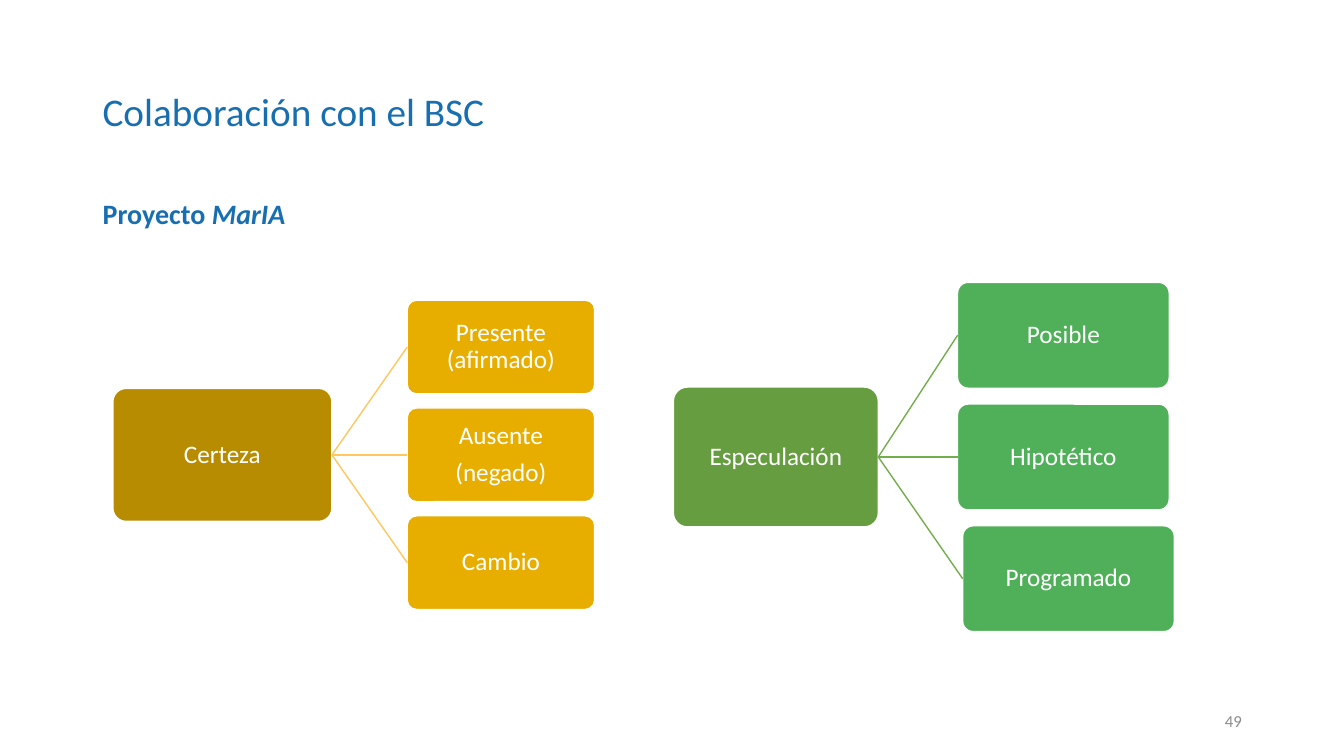
from dataclasses import dataclass

from lxml.etree import SubElement
from pptx import Presentation
from pptx.dml.color import RGBColor
from pptx.enum.shapes import MSO_CONNECTOR, MSO_SHAPE
from pptx.enum.text import MSO_ANCHOR, PP_ALIGN
from pptx.oxml.ns import qn
from pptx.shapes.autoshape import Shape
from pptx.slide import Slide
from pptx.util import Inches, Length, Pt

WIDTH = Inches(13.333)
HEIGHT = Inches(7.5)


@dataclass(frozen=True)
class Theme:
    font: str = "Calibri"
    heading: str = "176FB1"
    number: str = "8C8C8C"
    white: str = "FFFFFF"
    title_size: int = 28
    subtitle_size: int = 20
    node_size: int = 18
    number_size: int = 12
    gold_root: str = "B88C00"
    gold_leaf: str = "E7AE00"
    gold_line: str = "FFC75E"
    green_root: str = "669D40"
    green_leaf: str = "50B059"
    green_line: str = "73AE4C"


THEME = Theme()


@dataclass(frozen=True)
class Area:
    """A rectangle in percent of the slide's width and height."""
    left: float
    top: float
    width: float
    height: float

    def lengths(self) -> tuple[Length, Length, Length, Length]:
        return (across(self.left), down(self.top),
                across(self.width), down(self.height))


@dataclass(frozen=True)
class Style:
    size: int
    color: str
    align: PP_ALIGN = PP_ALIGN.LEFT
    line_spacing: float = 1.0
    space_after: float = 0


@dataclass(frozen=True)
class Run:
    text: str
    bold: bool = False
    italic: bool = False


@dataclass(frozen=True)
class Leaf:
    lines: tuple[str, ...]
    shift: float = 0


@dataclass(frozen=True)
class Tree:
    root: str
    root_area: Area
    leaf_left: float
    leaf_width: float
    leaf_height: float
    leaves: tuple[Leaf, ...]
    root_color: str
    leaf_color: str
    line_color: str


NODE_STYLE = Style(THEME.node_size, THEME.white, PP_ALIGN.CENTER, 0.9, 6.3)
LEAF_PITCH = 1.15  # in leaf heights

TREES = (
    Tree("Certeza", Area(8.4, 51.37, 16.3, 17.6), 30.3, 13.95, 12.4,
         (Leaf(("Presente (afirmado)",)), Leaf(("Ausente", "(negado)")),
          Leaf(("Cambio",))),
         THEME.gold_root, THEME.gold_leaf, THEME.gold_line),
    Tree("Especulación", Area(50.1, 51.2, 15.25, 18.5), 71.25, 15.75, 14,
         (Leaf(("Posible",)), Leaf(("Hipotético",)),
          Leaf(("Programado",), 0.38)),
         THEME.green_root, THEME.green_leaf, THEME.green_line),
)


def across(percent: float) -> Length:
    return Length(round(WIDTH * percent / 100))


def down(percent: float) -> Length:
    return Length(round(HEIGHT * percent / 100))


def write(shape: Shape, paragraphs: list[list[Run]], style: Style,
          anchor: MSO_ANCHOR) -> None:
    frame = shape.text_frame
    frame.word_wrap = True
    frame.vertical_anchor = anchor
    for index, runs in enumerate(paragraphs):
        paragraph = frame.add_paragraph() if index else frame.paragraphs[0]
        paragraph.alignment = style.align
        paragraph.line_spacing = style.line_spacing
        paragraph.space_after = Pt(style.space_after)
        for part in runs:
            run = paragraph.add_run()
            run.text = part.text
            run.font.name = THEME.font
            run.font.size = Pt(style.size)
            run.font.bold = part.bold
            run.font.italic = part.italic
            run.font.color.rgb = RGBColor.from_string(style.color)


def add_text(slide: Slide, area: Area, runs: list[Run], style: Style,
             anchor: MSO_ANCHOR = MSO_ANCHOR.MIDDLE) -> None:
    write(slide.shapes.add_textbox(*area.lengths()), [runs], style, anchor)


def add_node(slide: Slide, area: Area, lines: tuple[str, ...],
             color: str) -> Shape:
    shape = slide.shapes.add_shape(MSO_SHAPE.ROUNDED_RECTANGLE, *area.lengths())
    shape.adjustments[0] = 0.1
    shape.shadow.inherit = False
    shape.fill.solid()
    shape.fill.fore_color.rgb = RGBColor.from_string(color)
    shape.line.color.rgb = RGBColor.from_string(THEME.white)
    shape.line.width = Pt(1)
    frame = shape.text_frame
    frame.margin_left = frame.margin_right = Inches(0.04)
    frame.margin_top = frame.margin_bottom = Inches(0.04)
    write(shape, [[Run(line)] for line in lines], NODE_STYLE, MSO_ANCHOR.MIDDLE)
    return shape


def join(slide: Slide, root: Shape, leaf: Shape, color: str) -> None:
    connector = slide.shapes.add_connector(MSO_CONNECTOR.STRAIGHT, 0, 0, 0, 0)
    connector.begin_connect(root, 3)
    connector.end_connect(leaf, 1)
    connector.line.color.rgb = RGBColor.from_string(color)
    connector.line.width = Pt(1)
    SubElement(connector.element.spPr, qn("a:effectLst"))


def add_tree(slide: Slide, tree: Tree) -> None:
    """Draw the root with its leaves stacked evenly about the root's middle."""
    root = add_node(slide, tree.root_area, (tree.root,), tree.root_color)
    middle = tree.root_area.top + tree.root_area.height / 2
    for index, leaf in enumerate(tree.leaves):
        steps = index - (len(tree.leaves) - 1) / 2
        top = middle + (steps * LEAF_PITCH - 0.5) * tree.leaf_height
        area = Area(tree.leaf_left + leaf.shift, top,
                    tree.leaf_width, tree.leaf_height)
        node = add_node(slide, area, leaf.lines, tree.leaf_color)
        join(slide, root, node, tree.line_color)


def main() -> None:
    presentation = Presentation()
    presentation.slide_width = WIDTH
    presentation.slide_height = HEIGHT
    slide = presentation.slides.add_slide(presentation.slide_layouts[6])

    add_text(slide, Area(6.9, 5.33, 86.25, 19.33),
             [Run("Colaboración con el BSC")],
             Style(THEME.title_size, THEME.heading, line_spacing=0.9))
    add_text(slide, Area(6.9, 23.07, 22.75, 9.47),
             [Run("Proyecto ", bold=True), Run("MarIA", bold=True, italic=True)],
             Style(THEME.subtitle_size, THEME.heading, line_spacing=1.5,
                   space_after=8),
             MSO_ANCHOR.TOP)
    for tree in TREES:
        add_tree(slide, tree)
    add_text(slide, Area(70.65, 92.67, 22.5, 5.33), [Run("49")],
             Style(THEME.number_size, THEME.number, PP_ALIGN.RIGHT))

    presentation.save("out.pptx")


if __name__ == "__main__":
    main()
